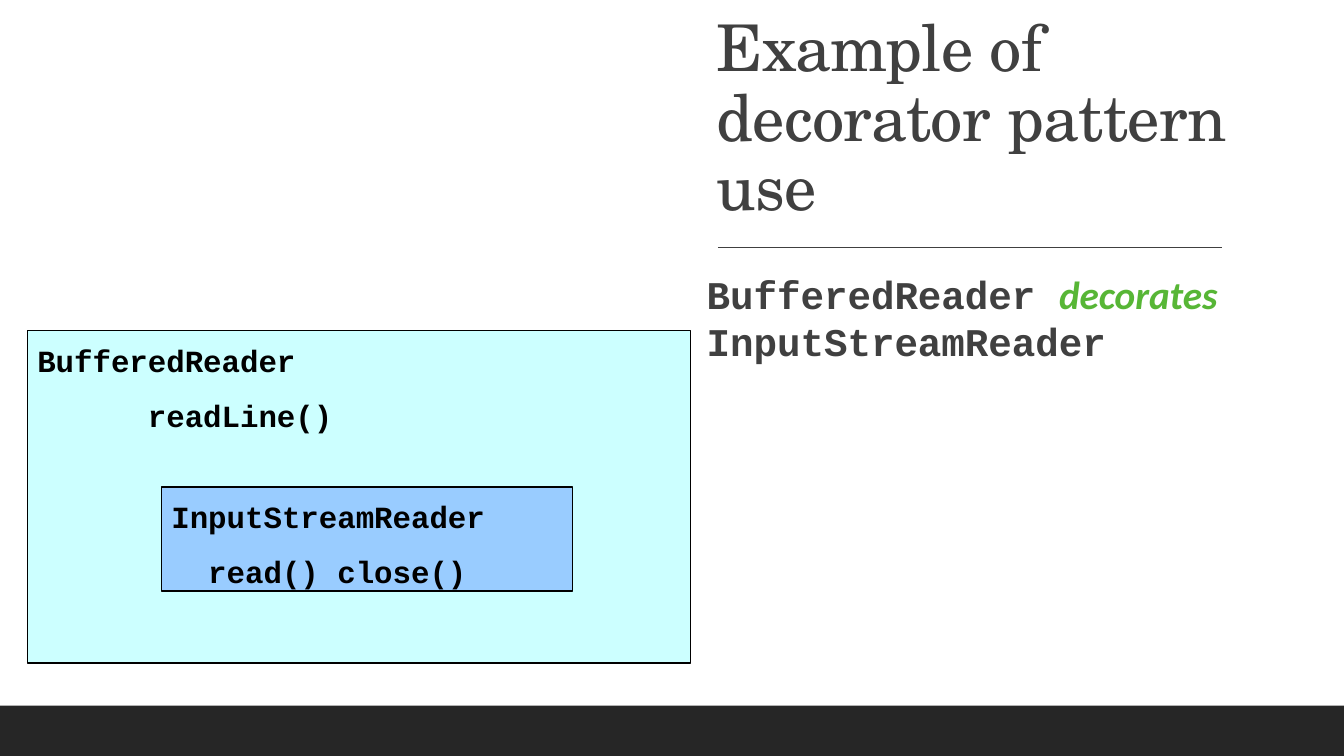
import pptx
import pptx.util
import pptx.dml.color
import pptx.enum.shapes
import pptx.enum.text
import pptx.oxml
from pptx.util import Cm, Pt

RGBColor = pptx.dml.color.RGBColor
WHITE = RGBColor(0xFF, 0xFF, 0xFF)
BLACK = RGBColor(0, 0, 0)
DARK = RGBColor(0x26, 0x26, 0x26)
GREY = RGBColor(0x40, 0x40, 0x40)
GREEN = RGBColor(0x57, 0xB6, 0x36)
CYAN = RGBColor(0xCC, 0xFF, 0xFF)
BLUE = RGBColor(0x99, 0xCC, 0xFF)
CODE_FONT = "Courier New"


def set_font(font, name, size, color, bold=False):
    font.name = name
    font.size = Pt(size)
    font.color.rgb = color
    font.bold = bold


def add_rectangle(slide, box, fill, line=None):
    shape = slide.shapes.add_shape(
        pptx.enum.shapes.MSO_SHAPE.RECTANGLE, *map(Cm, box))
    shape.shadow.inherit = False
    shape.fill.solid()
    shape.fill.fore_color.rgb = fill
    if line is None:
        shape.line.fill.background()
    else:
        shape.line.color.rgb = line
        shape.line.width = Pt(1)
    return shape


def add_text_box(slide, box):
    frame = slide.shapes.add_textbox(*map(Cm, box)).text_frame
    frame.word_wrap = True
    return frame


def add_title(slide, box):
    left, top, width, height = box
    frame = add_text_box(slide, box)
    frame.vertical_anchor = pptx.enum.text.MSO_ANCHOR.BOTTOM
    paragraph = frame.paragraphs[0]
    paragraph.line_spacing = 0.9
    run = paragraph.add_run()
    run.text = "Example of decorator pattern use"
    set_font(paragraph.font, "TeX Gyre Schola", 46, GREY)
    run.font._element.set("spc", "-50")

    # Rule below the title
    rule_left, rule_top = Cm(left + 0.28), Cm(top + height + 0.45)
    rule = slide.shapes.add_connector(
        pptx.enum.shapes.MSO_CONNECTOR.STRAIGHT,
        rule_left, rule_top, rule_left + Cm(12.7), rule_top)
    rule.line.color.rgb = GREY
    rule.line.width = Pt(1)
    rule._element.spPr.append(pptx.oxml.parse_xml(
        '<a:effectLst xmlns:a="http://schemas.openxmlformats.org/drawingml/2006/main"/>'))


def add_statement(slide, box):
    frame = add_text_box(slide, box)
    frame.margin_left = frame.margin_right = 0
    paragraph = frame.paragraphs[0]
    for text, name, color in (("BufferedReader ", CODE_FONT, GREY),
                              ("decorates ", "Calibri", GREEN),
                              ("InputStreamReader", CODE_FONT, GREY)):
        run = paragraph.add_run()
        run.text = text
        set_font(run.font, name, 28, color, bold=True)
        run.font.italic = color == GREEN


def add_class_box(slide, box, fill, lines):
    frame = add_rectangle(slide, box, fill, BLACK).text_frame
    frame.word_wrap = True
    frame.vertical_anchor = pptx.enum.text.MSO_ANCHOR.TOP
    frame.margin_top = Cm(0.27)
    for index, line in enumerate(lines):
        paragraph = frame.add_paragraph() if index else frame.paragraphs[0]
        paragraph.text = line
        paragraph.alignment = pptx.enum.text.PP_ALIGN.LEFT
        if index:
            paragraph.space_before = Pt(13)
        set_font(paragraph.font, CODE_FONT, 22, BLACK, bold=True)


def add_class_diagram(slide, box):
    left, top, width, height = box
    add_class_box(slide, box, CYAN, ("BufferedReader", "      readLine()"))
    add_class_box(slide, (left + 3.38, top + 3.94, 10.36, 2.62), BLUE,
                  ("InputStreamReader", "  read() close()"))


def main():
    presentation = pptx.Presentation()
    presentation.slide_width = Cm(33.87)
    presentation.slide_height = Cm(19.05)
    slide = presentation.slides.add_slide(presentation.slide_layouts[6])
    slide.background.fill.solid()
    slide.background.fill.fore_color.rgb = WHITE

    # Right column: title and statement
    add_title(slide, (17.81, 1.75, 14.25, 4.04))
    add_statement(slide, (17.81, 6.68, 14.25, 9.63))

    # Footer band
    add_rectangle(slide, (0, 17.78, 33.87, 1.27), DARK)

    # Left column: the decorator wraps the reader
    add_class_diagram(slide, (0.69, 8.33, 16.71, 8.38))

    presentation.save("out.pptx")


if __name__ == "__main__":
    main()
